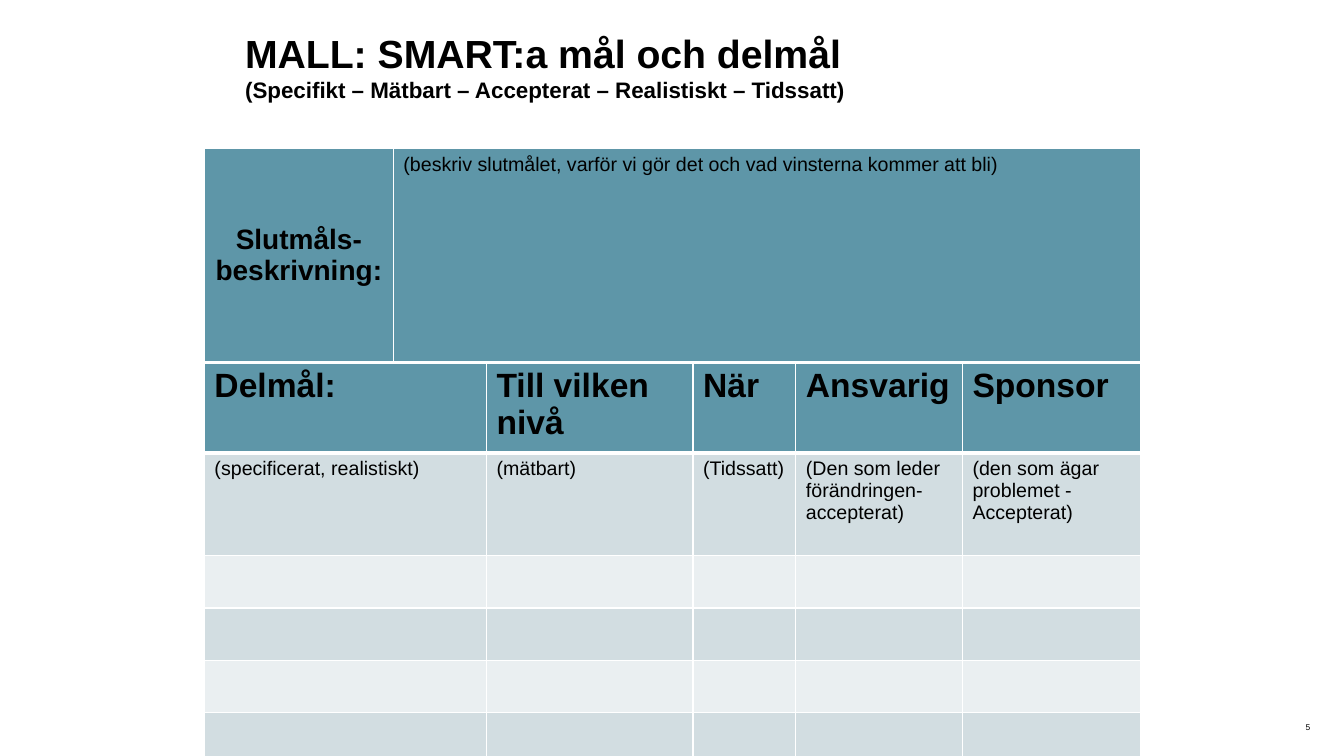
from dataclasses import dataclass

from lxml import etree
from pptx import Presentation
from pptx.dml.color import RGBColor
from pptx.enum.text import MSO_ANCHOR, PP_ALIGN
from pptx.oxml.ns import qn
from pptx.slide import Slide
from pptx.table import _Cell
from pptx.text.text import Font
from pptx.util import Pt

LEFT, RIGHT, CENTER = PP_ALIGN.LEFT, PP_ALIGN.RIGHT, PP_ALIGN.CENTER
TOP, MIDDLE = MSO_ANCHOR.TOP, MSO_ANCHOR.MIDDLE

BLACK, WHITE = "000000", "FFFFFF"
TEAL, DARK_BAND, LIGHT_BAND = "5E96A8", "D2DDE1", "EAEFF1"
THIN, THICK = 1, 3
TABLE_LEFT = 146


@dataclass
class Entry:
    text: str = ""
    size: float = 14
    bold: bool = False
    align: PP_ALIGN = LEFT
    anchor: MSO_ANCHOR = TOP


@dataclass
class Row:
    height: float
    fill: str
    entries: list[Entry]
    top_line: float = THIN
    bottom_line: float = THIN


@dataclass
class Grid:
    top: float
    columns: list[float]
    rows: list[Row]


def color(value: str) -> RGBColor:
    return RGBColor.from_string(value)


def style_font(font: Font, size: float, bold: bool) -> None:
    font.name = "Arial"
    font.size = Pt(size)
    font.bold = bold
    font.color.rgb = color(BLACK)


def set_borders(cell: _Cell, top: float, bottom: float) -> None:
    """Draw white lines around a cell, thin at the sides."""
    properties = cell._tc.get_or_add_tcPr()
    widths = {"a:lnL": THIN, "a:lnR": THIN, "a:lnT": top, "a:lnB": bottom}
    for position, (tag, width) in enumerate(widths.items()):
        line = etree.Element(qn(tag), w=str(Pt(width)))
        fill = etree.SubElement(line, qn("a:solidFill"))
        etree.SubElement(fill, qn("a:srgbClr"), val=WHITE)
        properties.insert(position, line)


def fill_cell(cell: _Cell, entry: Entry, row: Row) -> None:
    cell.fill.solid()
    cell.fill.fore_color.rgb = color(row.fill)
    set_borders(cell, row.top_line, row.bottom_line)
    cell.vertical_anchor = entry.anchor
    paragraph = cell.text_frame.paragraphs[0]
    paragraph.text = entry.text
    paragraph.alignment = entry.align
    style_font(paragraph.font, entry.size, entry.bold)


def draw_grid(slide: Slide, grid: Grid) -> None:
    table = slide.shapes.add_table(
        len(grid.rows), len(grid.columns), Pt(TABLE_LEFT), Pt(grid.top),
        Pt(sum(grid.columns)), Pt(sum(row.height for row in grid.rows)),
    ).table
    for column, width in zip(table.columns, grid.columns):
        column.width = Pt(width)
    for table_row, row in zip(table.rows, grid.rows):
        table_row.height = Pt(row.height)
        for cell, entry in zip(table_row.cells, row.entries):
            fill_cell(cell, entry, row)


def draw_title(slide: Slide) -> None:
    frame = slide.shapes.add_textbox(Pt(168), Pt(16.5), Pt(648), Pt(61)).text_frame
    frame.word_wrap = True
    frame.vertical_anchor = MIDDLE
    paragraph = frame.paragraphs[0]
    heading = paragraph.add_run()
    heading.text = "MALL: SMART:a mål och delmål"
    style_font(heading.font, 28, True)
    paragraph.add_line_break()
    explanation = paragraph.add_run()
    explanation.text = "(Specifikt – Mätbart – Accepterat – Realistiskt – Tidssatt)"
    style_font(explanation.font, 16, True)


def draw_page_number(slide: Slide) -> None:
    frame = slide.shapes.add_textbox(Pt(888), Pt(516), Pt(48), Pt(7)).text_frame
    frame.margin_left = frame.margin_right = frame.margin_top = frame.margin_bottom = 0
    frame.word_wrap = True
    paragraph = frame.paragraphs[0]
    paragraph.text = "5"
    paragraph.alignment = RIGHT
    style_font(paragraph.font, 6, False)


HEADINGS = ["Delmål:", "Till vilken nivå", "När", "Ansvarig", "Sponsor"]
HINTS = [
    "(specificerat, realistiskt)",
    "(mätbart)",
    "(Tidssatt)",
    "(Den som leder förändringen- accepterat)",
    "(den som ägar problemet - Accepterat)",
]
ROW_HEIGHT = 37.5

MILESTONES = Grid(
    top=258.5,
    columns=[201.5, 147.5, 73.5, 119, 127],
    rows=[
        Row(ROW_HEIGHT, TEAL, [Entry(text, 24, True) for text in HEADINGS],
            bottom_line=THICK),
        Row(73.5, DARK_BAND, [Entry(text) for text in HINTS], top_line=THICK),
        *(Row(ROW_HEIGHT, band, [Entry() for _ in HEADINGS])
          for band in [LIGHT_BAND, DARK_BAND] * 2),
    ],
)
FINAL_GOAL = Grid(
    top=106,
    columns=[135, 533.5],
    rows=[
        Row(153, TEAL, [
            Entry("Slutmåls- beskrivning:", 20, True, CENTER, MIDDLE),
            Entry("(beskriv slutmålet, varför vi gör det och vad vinsterna kommer att bli)"),
        ], bottom_line=THICK),
    ],
)


def main() -> None:
    presentation = Presentation()
    presentation.slide_width = Pt(960)
    presentation.slide_height = Pt(540)
    slide = presentation.slides.add_slide(presentation.slide_layouts[6])
    draw_page_number(slide)
    draw_title(slide)
    for grid in (MILESTONES, FINAL_GOAL):
        draw_grid(slide, grid)
    presentation.save("out.pptx")


if __name__ == "__main__":
    main()
